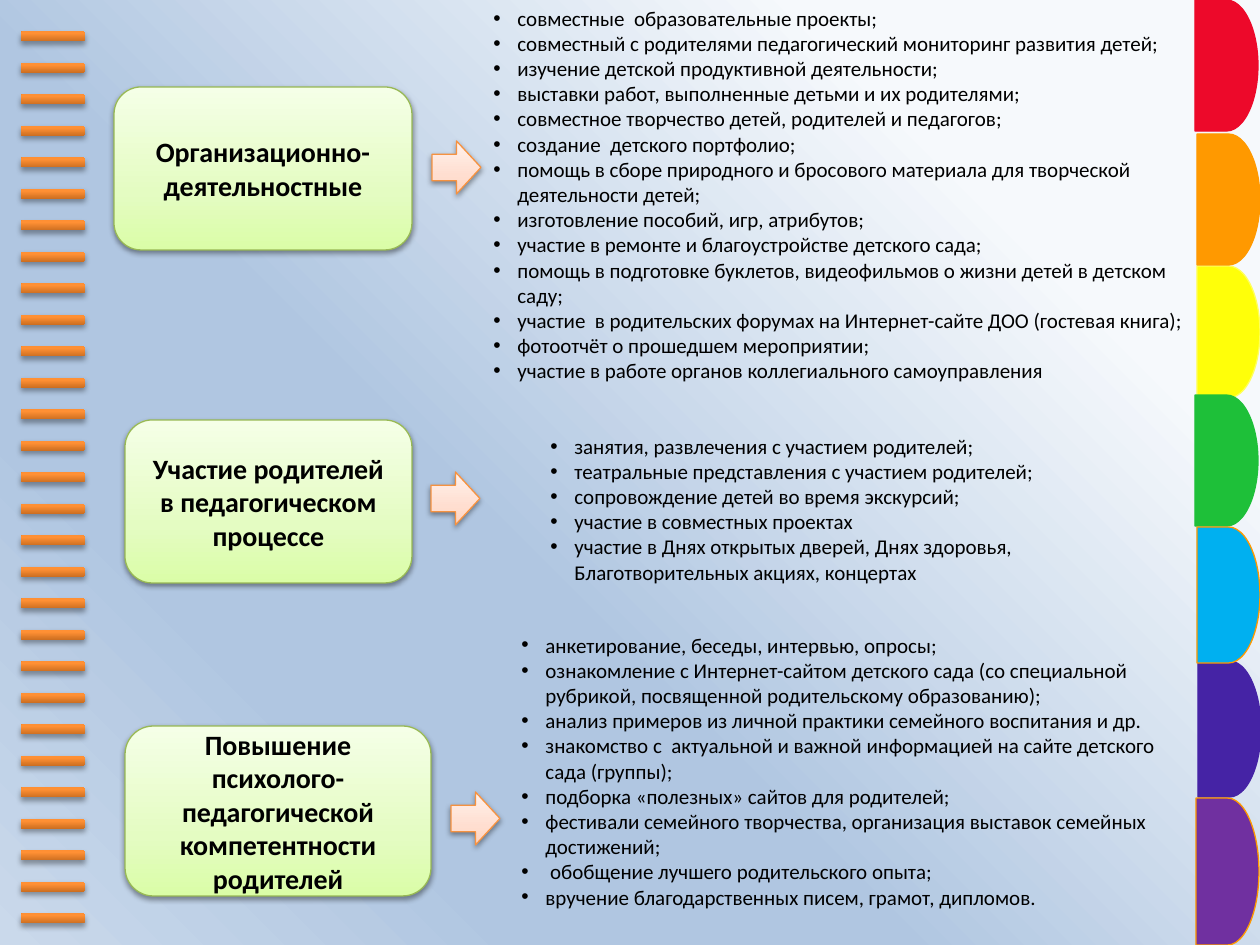
"""Builds a slide on three forms of work with parents, framed by notebook rings and coloured tabs."""
from lxml import etree
from pptx import Presentation, util as u
from pptx.dml.color import RGBColor
from pptx.enum import shapes, text
from pptx.oxml.ns import qn

SLIDE_W, SLIDE_H = 1260, 945
EMU_PER_PX = 914400 / 126
FONT = "Calibri"
COLORS = {
    "text": "000000", "shadow": "000000", "box_line": "98B955", "arrow_line": "F69240",
    "red": "ED092A", "orange": "FF9900", "yellow": "FFFF09", "pale_yellow": "FFFF5B",
    "green": "1EC039", "blue": "00B0F0", "indigo": "4523A5", "purple": "7030A0",
}
GRADIENTS = {
    "background": (135, [(21, "F6F9FC"), (59, "B0C6E1"), (76, "B0C6E1"), (100, "CAD9EB")]),
    "ring": (270, [(0, "CC6E20"), (80, "FF9034"), (100, "FF9136")]),
    "box": (270, [(0, "DAFDA7"), (35, "E4FCC2"), (100, "F5FFE7")]),
    "arrow": (270, [(0, "FFD2BD"), (35, "FFDED0"), (100, "FFF2ED")]),
}
FORMS = [
    {
        "label": "Организационно-деятельностные",
        "box": (114, 87, 298, 163), "arrow": (432, 141), "list": (481, -1, 747, 432),
        "items": [
            "совместные  образовательные проекты;",
            "совместный с родителями педагогический мониторинг развития детей;",
            "изучение детской продуктивной деятельности;",
            "выставки работ, выполненные детьми и их родителями;",
            "совместное творчество детей, родителей и педагогов;",
            "создание  детского портфолио;",
            "помощь в сборе природного и бросового материала для творческой деятельности детей;",
            "изготовление пособий, игр, атрибутов;",
            "участие в ремонте и благоустройстве детского сада;",
            "помощь в подготовке буклетов, видеофильмов о жизни детей в детском саду;",
            "участие  в родительских форумах на Интернет-сайте ДОО (гостевая книга);",
            "фотоотчёт о прошедшем мероприятии;",
            "участие в работе органов коллегиального самоуправления",
        ],
    },
    {
        "label": "Участие родителей в педагогическом процессе",
        "box": (125, 420, 287, 163), "arrow": (431, 472), "list": (538, 427, 630, 165),
        "items": [
            "занятия, развлечения с участием родителей;",
            "театральные представления с участием родителей;",
            "сопровождение детей во время экскурсий;",
            "участие в совместных проектах",
            "участие в Днях открытых дверей, Днях здоровья, Благотворительных акциях, концертах",
        ],
    },
    {
        "label": "Повышение психолого-педагогической компетентности родителей",
        "box": (125, 726, 306, 170), "arrow": (451, 792), "list": (509, 626, 688, 292),
        "items": [
            "анкетирование, беседы, интервью, опросы;",
            "ознакомление с Интернет-сайтом детского сада (со специальной рубрикой, "
            "посвященной родительскому образованию);",
            "анализ примеров из личной практики семейного воспитания и др.",
            "знакомство с  актуальной и важной информацией на сайте детского сада (группы);",
            "подборка «полезных» сайтов для родителей;",
            "фестивали семейного творчества, организация выставок семейных достижений;",
            " обобщение лучшего родительского опыта;",
            "вручение благодарственных писем, грамот, дипломов.",
        ],
    },
]
TABS = [
    (1197, 266, 132, "yellow", "pale_yellow"),
    (1195, 395, 131, "green", "green"),
    (1197, 134, 131, "orange", "orange"),
    (1198, 661, 136, "indigo", "indigo"),
    (1195, 0, 131, "red", "red"),
    (1197, 527, 136, "blue", "orange"),
    (1196, 798, 147, "purple", "orange"),
]
TAB_W = 63
RING_COUNT, RING_X, RING_W, RING_H, RING_PITCH = 29, 21, 64, 10, 31.5
ARROW_SIZE = (49, 53)
BULLET_INDENT = 24


def px(length):
    return u.Emu(round(length * EMU_PER_PX))


def rgb(name):
    return RGBColor.from_string(COLORS[name])


def add_node(parent, tag, **attributes):
    return etree.SubElement(parent, qn(tag), {key: str(value) for key, value in attributes.items()})


def fill_gradient(fill, holder, name):
    angle, stops = GRADIENTS[name]
    fill.solid()
    solid = holder.find(qn("a:solidFill"))
    gradient = etree.Element(qn("a:gradFill"), rotWithShape="1")
    stop_list = add_node(gradient, "a:gsLst")
    for position, color in stops:
        add_node(add_node(stop_list, "a:gs", pos=position * 1000), "a:srgbClr", val=color)
    add_node(gradient, "a:lin", ang=angle * 60000, scaled=0)
    holder.replace(solid, gradient)


def add_outline(shape, color):
    if color:
        shape.line.color.rgb = rgb(color)
        shape.line.width = u.Pt(0.75)
    else:
        shape.line.fill.background()


def add_raised(slide, preset, place, gradient, line=None, opacity=38, distance=1.6):
    shape = slide.shapes.add_shape(preset, *map(px, place))
    properties = shape.element.spPr
    fill_gradient(shape.fill, properties, gradient)
    add_outline(shape, line)
    shape.shadow.inherit = False
    shadow = add_node(properties.find(qn("a:effectLst")), "a:outerShdw", blurRad=u.Pt(3.1),
                      dist=u.Pt(distance), dir=90 * 60000, rotWithShape=0)
    color = add_node(shadow, "a:srgbClr", val=COLORS["shadow"])
    add_node(color, "a:alpha", val=opacity * 1000)
    return shape


def format_runs(paragraph, size, bold=False):
    for run in paragraph.runs:
        run.font.name, run.font.size, run.font.bold = FONT, u.Pt(size), bold
        run.font.color.rgb = rgb("text")


def add_label(slide, form):
    box = add_raised(slide, shapes.MSO_SHAPE.ROUNDED_RECTANGLE, form["box"], "box", "box_line")
    frame = box.text_frame
    frame.text = form["label"]
    frame.word_wrap = True
    frame.vertical_anchor = text.MSO_ANCHOR.MIDDLE
    frame.paragraphs[0].alignment = text.PP_ALIGN.CENTER
    format_runs(frame.paragraphs[0], 16, True)


def add_items(slide, form):
    frame = slide.shapes.add_textbox(*map(px, form["list"])).text_frame
    frame.text = "\n".join(form["items"])
    frame.word_wrap = True
    frame.auto_size = text.MSO_AUTO_SIZE.SHAPE_TO_FIT_TEXT
    for paragraph in frame.paragraphs:
        format_runs(paragraph, 12)
        properties = paragraph._p.get_or_add_pPr()
        properties.set("marL", str(px(BULLET_INDENT)))
        properties.set("indent", str(px(-BULLET_INDENT)))
        add_node(properties, "a:buFont", typeface="Arial")
        add_node(properties, "a:buChar", char="•")


def main():
    deck = Presentation()
    deck.slide_width, deck.slide_height = px(SLIDE_W), px(SLIDE_H)
    slide = deck.slides.add_slide(deck.slide_layouts[6])
    background = slide.background.fill
    background.solid()
    fill_gradient(background, slide.element.find(".//" + qn("p:bgPr")), "background")

    for ring in range(1, RING_COUNT + 1):
        add_raised(slide, shapes.MSO_SHAPE.FLOWCHART_ALTERNATE_PROCESS,
                   (RING_X, ring * RING_PITCH, RING_W, RING_H), "ring", opacity=35, distance=1.8)

    for form in FORMS:
        add_label(slide, form)
        add_raised(slide, shapes.MSO_SHAPE.RIGHT_ARROW, form["arrow"] + ARROW_SIZE,
                   "arrow", "arrow_line")
        add_items(slide, form)

    for left, top, height, fill, line in TABS:
        tab = slide.shapes.add_shape(shapes.MSO_SHAPE.FLOWCHART_DELAY,
                                     *map(px, (left, top, TAB_W, height)))
        tab.fill.solid()
        tab.fill.fore_color.rgb = rgb(fill)
        add_outline(tab, line)
        tab.shadow.inherit = False

    deck.save("out.pptx")


if __name__ == "__main__":
    main()
